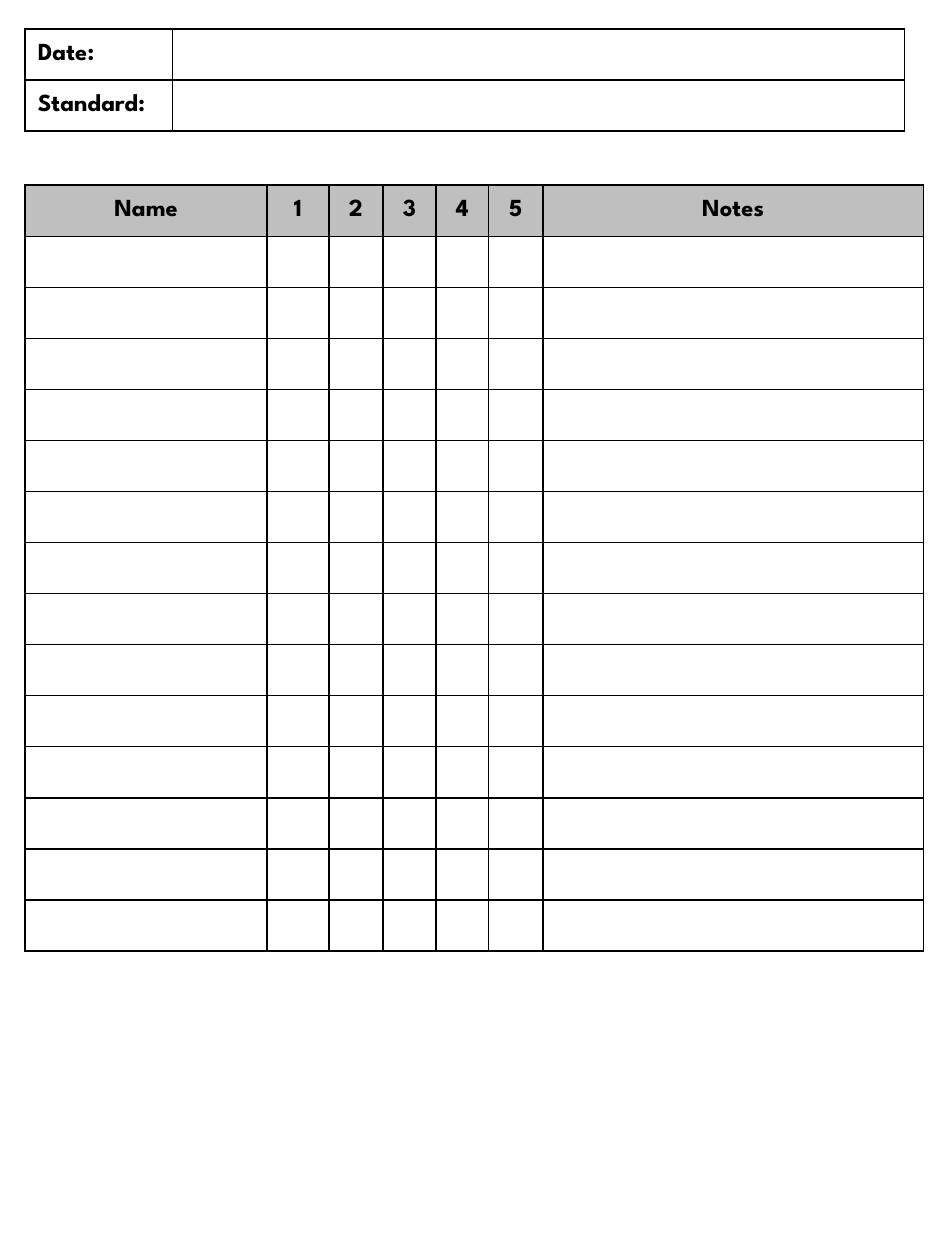
from pptx import Presentation, util as u
from pptx.dml import color
from pptx.enum import text
from pptx.oxml import parse_xml
from pptx.oxml.ns import nsdecls

GRID_COLUMNS, GRID_ROWS = 750, 1000
INK, HEADER_GREY, PAPER = "000000", "BFBFBF", "FFFFFF"


def rgb(value):
    """Return the colour for a hex string."""
    return color.RGBColor.from_string(value)


class TrackingSheet:
    """Holds the style and the current slide of a class tracking sheet."""

    label_format = {"name": "League Spartan", "size": u.Pt(14), "bold": True}
    cell_format = {
        "vertical_anchor": text.MSO_ANCHOR.MIDDLE,
        "margin_top": u.Inches(0.03),
        "margin_bottom": u.Inches(0.03),
    }

    def __init__(self, deck):
        """Add a blank slide and measure its grid."""
        self.slide = deck.slides.add_slide(deck.slide_layouts[6])
        self.column = deck.slide_width / GRID_COLUMNS
        self.row = deck.slide_height / GRID_ROWS

    def border(self, cell):
        """Draw a one-point line on all four sides of a cell."""
        properties = cell._tc.get_or_add_tcPr()
        for index, side in enumerate("LRTB"):
            properties.insert(index, parse_xml(
                f'<a:ln{side} {nsdecls("a")} w="12700"><a:solidFill>'
                f'<a:srgbClr val="{INK}"/></a:solidFill></a:ln{side}>'))

    def label(self, cell, wording, align):
        """Write bold wording in a cell."""
        paragraph = cell.text_frame.paragraphs[0]
        paragraph.alignment = align
        run = paragraph.add_run()
        run.text = wording
        for key, value in self.label_format.items():
            setattr(run.font, key, value)
        run.font.color.rgb = rgb(INK)

    def table(self, left, top, widths, height, rows, align, fills):
        """Add a ruled table, with one fill or None for each row."""
        table = self.slide.shapes.add_table(
            len(rows), len(widths), round(left * self.column), round(top * self.row),
            round(sum(widths) * self.column), round(height * self.row)).table
        for column, width in zip(table.columns, widths):
            column.width = round(width * self.column)
        for line, wordings, fill in zip(table.rows, rows, fills):
            line.height = round(height * self.row / len(rows))
            for cell, wording in zip(line.cells, wordings):
                for key, value in self.cell_format.items():
                    setattr(cell, key, value)
                if fill:
                    cell.fill.solid()
                    cell.fill.fore_color.rgb = rgb(fill)
                else:
                    cell.fill.background()
                self.border(cell)
                if wording:
                    self.label(cell, wording, align)


def main():
    """Build the sheet and save it."""
    deck = Presentation()
    deck.slide_width, deck.slide_height = u.Inches(7.5), u.Inches(10)
    sheet = TrackingSheet(deck)

    details = [["Date:", ""], ["Standard:", ""]]
    sheet.table(20, 23, [117, 581], 81, details,
                text.PP_ALIGN.LEFT, [PAPER] * len(details))

    headings = ["Name", "1", "2", "3", "4", "5", "Notes"]
    students = [[""] * len(headings)] * 14
    sheet.table(20, 147, [192, 49, 43, 42, 42, 43, 302], 608, [headings] + students,
                text.PP_ALIGN.CENTER, [HEADER_GREY] + [None] * len(students))

    deck.save("out.pptx")


if __name__ == "__main__":
    main()
